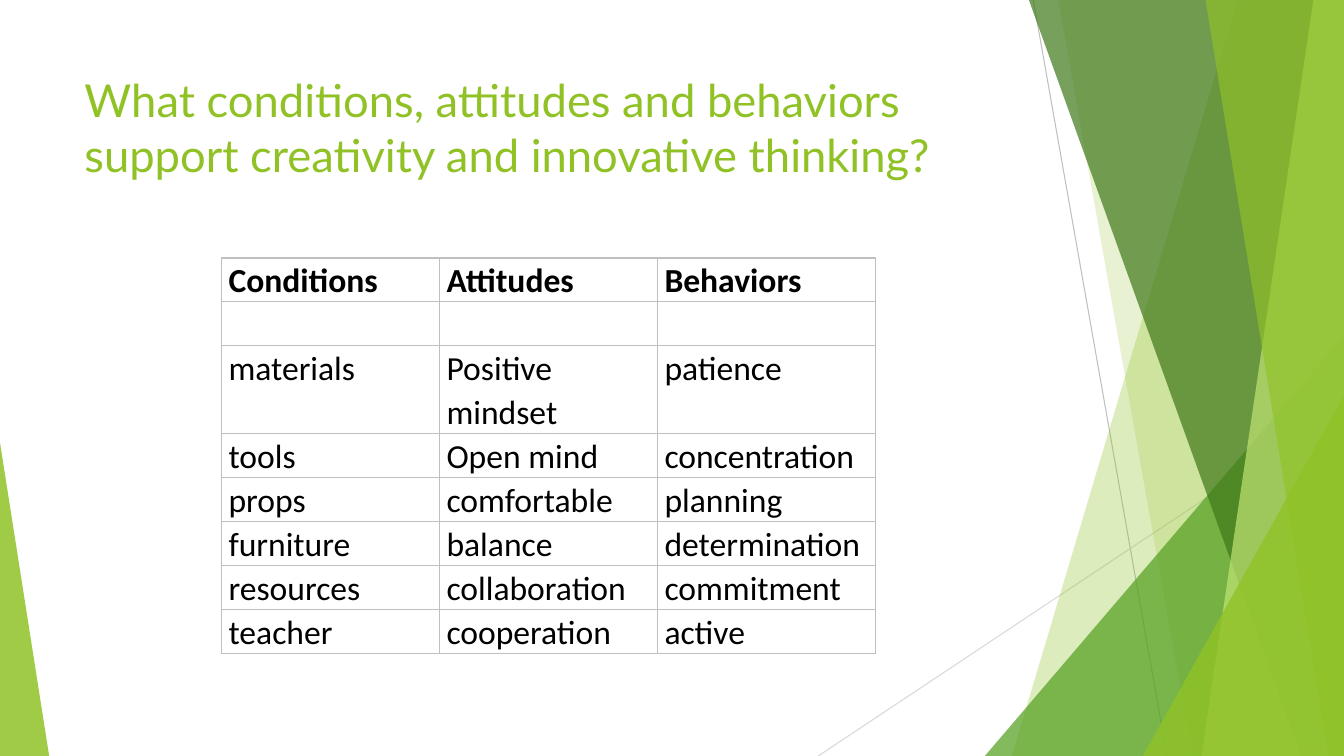
import lxml.etree
import pptx
import pptx.dml.color
import pptx.enum.shapes
import pptx.enum.text
import pptx.oxml.ns
import pptx.util

Cm = pptx.util.Cm
Pt = pptx.util.Pt
RGBColor = pptx.dml.color.RGBColor
qn = pptx.oxml.ns.qn

LIME = RGBColor(0x90, 0xC2, 0x26)
GREEN = RGBColor(0x54, 0xA0, 0x21)
DARK_GREEN = RGBColor(0x3F, 0x78, 0x19)
PALE_LIME = RGBColor(0xC0, 0xE4, 0x74)
GRAY = RGBColor(0xBF, 0xBF, 0xBF)
LIGHT_GRAY = RGBColor(0xD9, 0xD9, 0xD9)
BLACK = RGBColor(0x00, 0x00, 0x00)

SLIDE_WIDTH = 33.87
SLIDE_HEIGHT = 19.05
ROW_HEIGHT = 1.107

TITLE = "What conditions, attitudes and behaviors support creativity and innovative thinking?"
ROWS = [
    ("Conditions", "Attitudes", "Behaviors"),
    ("", "", ""),
    ("materials", "Positive mindset", "patience"),
    ("tools", "Open mind", "concentration"),
    ("props", "comfortable", "planning"),
    ("furniture", "balance", "determination"),
    ("resources", "collaboration", "commitment"),
    ("teacher", "cooperation", "active"),
]
TWO_LINE_ROW = 2


def paint(shape, color, opacity):
    shape.shadow.inherit = False
    shape.fill.solid()
    shape.fill.fore_color.rgb = color
    shape.line.fill.background()
    color_element = shape.fill._xPr.find(qn("a:solidFill"))[0]
    alpha = lxml.etree.SubElement(color_element, qn("a:alpha"))
    alpha.set("val", str(opacity * 1000))


def add_line(slide, start, end, color):
    line = slide.shapes.add_connector(
        pptx.enum.shapes.MSO_CONNECTOR.STRAIGHT,
        Cm(start[0]), Cm(start[1]), Cm(end[0]), Cm(end[1]))
    line.line.color.rgb = color
    line.line.width = Pt(0.75)
    lxml.etree.SubElement(line._element.spPr, qn("a:effectLst"))


def add_band(slide, top_left, bottom_left, right, top, bottom, color, opacity):
    builder = slide.shapes.build_freeform(Cm(top_left), Cm(top), 1.0)
    builder.add_line_segments([
        (Cm(right), Cm(top)), (Cm(right), Cm(bottom)), (Cm(bottom_left), Cm(bottom))])
    paint(builder.convert_to_shape(), color, opacity)


def add_wedge(slide, left, top, right, bottom, apex, color, opacity):
    wedge = slide.shapes.add_shape(
        pptx.enum.shapes.MSO_SHAPE.ISOSCELES_TRIANGLE,
        Cm(left), Cm(top), Cm(right - left), Cm(bottom - top))
    wedge.adjustments[0] = apex
    paint(wedge, color, opacity)


def add_facets(slide, left, top, width, height):
    right, bottom = left + width, top + height

    def band(top_offset, bottom_offset, color, opacity):
        add_band(slide, left + top_offset, left + bottom_offset,
                 right, top, bottom, color, opacity)

    def wedge(left_offset, top_offset, color, opacity):
        add_wedge(slide, left + left_offset, top + top_offset,
                  right, bottom, 1, color, opacity)

    add_line(slide, (left + 5.42, top), (left + 8.79, bottom), GRAY)
    add_line(slide, (right, top + 10.24), (left, bottom), LIGHT_GRAY)
    band(10.57, 4.88, LIME, 30)
    band(6.05, 9.43, LIME, 20)
    wedge(4.2, 8.46, GREEN, 72)
    band(5.31, 12.17, DARK_GREEN, 70)
    band(12.48, 9.66, PALE_LIME, 70)
    band(9.76, 12.86, LIME, 65)
    wedge(8.18, 9.98, LIME, 80)


def add_run(paragraph, text, font_name, size, color, bold=False):
    run = paragraph.add_run()
    run.text = text
    run.font.name = font_name
    run.font.size = Pt(size)
    run.font.color.rgb = color
    run.font.bold = bold


def add_title(slide, left, top, width, height):
    box = slide.shapes.add_textbox(Cm(left), Cm(top), Cm(width), Cm(height))
    box.text_frame.word_wrap = True
    box.text_frame.vertical_anchor = pptx.enum.text.MSO_ANCHOR.TOP
    add_run(box.text_frame.paragraphs[0], TITLE, "Lato", 32.4, LIME)


def add_borders(cell):
    properties = cell._tc.get_or_add_tcPr()
    for index, side in enumerate(("lnL", "lnR", "lnT", "lnB")):
        border = lxml.etree.Element(qn("a:" + side), w=str(Pt(1)))
        fill = lxml.etree.SubElement(border, qn("a:solidFill"))
        lxml.etree.SubElement(fill, qn("a:srgbClr"), val=str(GRAY))
        properties.insert(index, border)


def add_answers_table(slide, left, top, width, height):
    frame = slide.shapes.add_table(
        len(ROWS), len(ROWS[0]), Cm(left), Cm(top), Cm(width), Cm(height))
    table = frame.table
    table.first_row = False
    table.horz_banding = False
    for column in table.columns:
        column.width = Cm(width / len(ROWS[0]))
    for row_index, texts in enumerate(ROWS):
        line_count = 2 if row_index == TWO_LINE_ROW else 1
        table.rows[row_index].height = Cm(height / (len(ROWS) + 1) * line_count)
        for column_index, text in enumerate(texts):
            cell = table.cell(row_index, column_index)
            cell.margin_left = cell.margin_right = Cm(0.18)
            cell.margin_top = cell.margin_bottom = 0
            cell.fill.background()
            add_borders(cell)
            if text:
                paragraph = cell.text_frame.paragraphs[0]
                paragraph.line_spacing = 1.07
                add_run(paragraph, text, "Calibri", 24, BLACK, row_index == 0)


def main():
    presentation = pptx.Presentation()
    presentation.slide_width = Cm(SLIDE_WIDTH)
    presentation.slide_height = Cm(SLIDE_HEIGHT)
    slide = presentation.slides.add_slide(presentation.slide_layouts[6])
    add_facets(slide, 20.62, 0, SLIDE_WIDTH - 20.62, SLIDE_HEIGHT)
    add_wedge(slide, 0, 11.15, 1.24, SLIDE_HEIGHT, 0, LIME, 85)
    add_title(slide, 1.88, 1.7, 23.88, 3.66)
    add_answers_table(slide, 5.58, 6.5, 16.48, ROW_HEIGHT * (len(ROWS) + 1))
    presentation.save("out.pptx")


if __name__ == "__main__":
    main()
